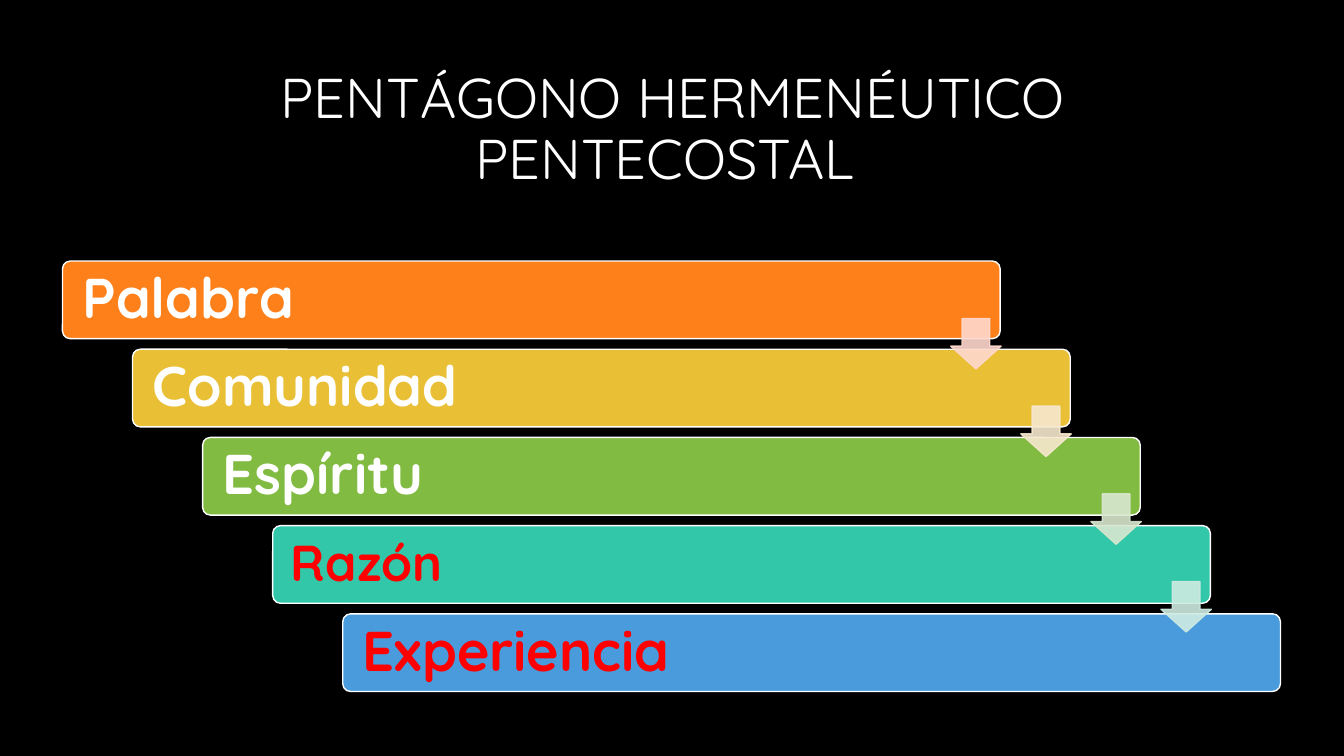
from dataclasses import dataclass
from typing import Optional

from lxml.etree import SubElement
from pptx import Presentation
from pptx.dml.color import RGBColor
from pptx.enum.shapes import MSO_SHAPE as Preset
from pptx.enum.text import MSO_ANCHOR as Anchor, PP_ALIGN as Align
from pptx.oxml.ns import qn
from pptx.util import Inches, Pt

FONT = "Quicksand"
COLORS = {
    "black": "000000", "white": "FFFFFF", "red": "FF0000",
    "orange": "FE801A", "yellow": "E9BF35", "green": "81BB42",
    "teal": "32C7A9", "blue": "4A9BDC",
    "pale_orange": "FFD8CD", "pale_yellow": "F7E8CE",
    "pale_green": "D8E7CF", "pale_teal": "CEEBE2",
}
BAR_LEFT, BAR_TOP, BAR_WIDTH, BAR_HEIGHT = 0.62, 2.59, 9.3, 0.77
STEP_X, STEP_Y = 0.695, 0.875
LABEL_OFFSET, LABEL_WIDTH, LABEL_HEIGHT = 0.03, 8.07, 0.72
ARROW_LEFT, ARROW_TOP, ARROW_SIZE, ARROW_STEP_Y = 9.43, 3.16, 0.5, 0.87
ARROW_ALPHA = 90


@dataclass
class Stage:
    label: str
    fill: str
    text_color: str = "white"
    size: int = 40
    inset: float = 0.17
    arrow: Optional[str] = None


STAGES = [
    Stage("Palabra", "orange", arrow="pale_orange"),
    Stage("Comunidad", "yellow", arrow="pale_yellow"),
    Stage("Espíritu", "green", arrow="pale_green"),
    Stage("Razón", "teal", "red", 36, 0.15, arrow="pale_teal"),
    Stage("Experiencia", "blue", "red"),
]


def rgb(name: str) -> RGBColor:
    return RGBColor.from_string(COLORS[name])


def add_text(page, text: str, left: float, top: float, width: float, height: float,
             size: int, color: str, bold: bool = False, align=Align.LEFT,
             inset: Optional[float] = None) -> None:
    box = page.shapes.add_textbox(Inches(left), Inches(top), Inches(width), Inches(height))
    frame = box.text_frame
    frame.word_wrap = True
    frame.vertical_anchor = Anchor.MIDDLE
    if inset is not None:
        frame.margin_left = frame.margin_right = Inches(inset)
        frame.margin_top = frame.margin_bottom = Inches(inset)
    para = frame.paragraphs[0]
    para.alignment = align
    para.line_spacing = 0.9
    span = para.add_run()
    span.text = text
    span.font.name = FONT
    span.font.size = Pt(size)
    span.font.bold = bold
    span.font.color.rgb = rgb(color)


def add_preset(page, preset, left: float, top: float, width: float, height: float,
               fill: str, line: str, adjustments: list[float]):
    shape = page.shapes.add_shape(
        preset, Inches(left), Inches(top), Inches(width), Inches(height))
    shape.shadow.inherit = False
    shape.fill.solid()
    shape.fill.fore_color.rgb = rgb(fill)
    shape.line.color.rgb = rgb(line)
    shape.line.width = Pt(1)
    for index, value in enumerate(adjustments):
        shape.adjustments[index] = value
    return shape


def add_bar(page, index: int, stage: Stage) -> None:
    left, top = BAR_LEFT + index * STEP_X, BAR_TOP + index * STEP_Y
    add_preset(page, Preset.ROUNDED_RECTANGLE, left, top, BAR_WIDTH, BAR_HEIGHT,
               stage.fill, "white", [0.1])
    add_text(page, stage.label, left + LABEL_OFFSET, top + LABEL_OFFSET,
             LABEL_WIDTH, LABEL_HEIGHT, stage.size, stage.text_color,
             bold=True, inset=stage.inset)


def add_arrow(page, index: int, color: str) -> None:
    arrow = add_preset(page, Preset.DOWN_ARROW, ARROW_LEFT + index * STEP_X,
                       ARROW_TOP + index * ARROW_STEP_Y, ARROW_SIZE, ARROW_SIZE,
                       color, color, [0.55, 0.45])
    # Transparency of fill and outline
    for tint in arrow.element.spPr.iter(qn("a:srgbClr")):
        SubElement(tint, qn("a:alpha"), val=str(ARROW_ALPHA * 1000))


def main() -> None:
    deck = Presentation()
    deck.slide_width, deck.slide_height = Inches(13.33), Inches(7.5)
    page = deck.slides.add_slide(deck.slide_layouts[6])
    page.background.fill.solid()
    page.background.fill.fore_color.rgb = rgb("black")

    # Title
    add_text(page, "PENTÁGONO HERMENÉUTICO PENTECOSTAL ", 1.56, 0.56, 10.22, 1.48,
             40, "white", align=Align.CENTER)

    # Staircase of bars
    for index, stage in enumerate(STAGES):
        add_bar(page, index, stage)

    # Arrows from each bar to the next
    for index, stage in enumerate(STAGES):
        if stage.arrow:
            add_arrow(page, index, stage.arrow)

    deck.save("out.pptx")


if __name__ == "__main__":
    main()
